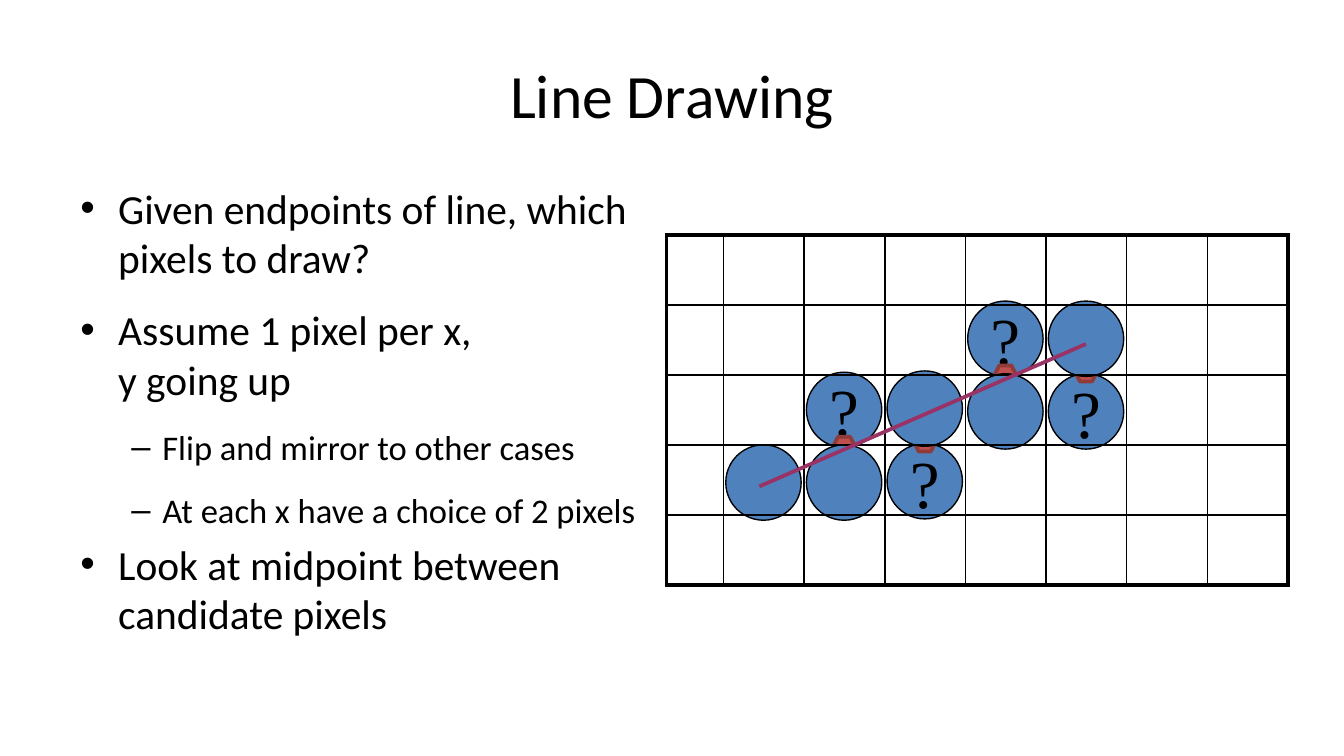
import pptx
import pptx.util
import pptx.dml.color
import pptx.enum.shapes
import pptx.enum.text
import pptx.oxml.ns
from lxml import etree

Pt = pptx.util.Pt
RGBColor = pptx.dml.color.RGBColor
SHAPE = pptx.enum.shapes.MSO_SHAPE
ALIGN = pptx.enum.text.PP_ALIGN
ANCHOR = pptx.enum.text.MSO_ANCHOR
qn = pptx.oxml.ns.qn

BLACK = RGBColor(0x00, 0x00, 0x00)
BLUE = RGBColor(0x4F, 0x81, 0xBD)
RED = RGBColor(0xC0, 0x50, 0x4D)
DARK_RED = RGBColor(0x8E, 0x3B, 0x39)
PURPLE = RGBColor(0x99, 0x33, 0x66)

TITLE = "Line Drawing"
BULLETS = [
    (0, 0, "Given endpoints of line, which pixels to draw?"),
    (0, 11.8, "Assume 1 pixel per x,\vy going up"),
    (1, 11.8, "Flip and mirror to other cases"),
    (1, 11.8, "At each x have a choice of 2 pixels"),
    (0, 4.4, "Look at midpoint between candidate pixels"),
]
LEVELS = [
    {"size": 22.2, "left": 20.2, "hang": 20.2, "mark": "•"},
    {"size": 18.5, "left": 43.9, "hang": 16.6, "mark": "–"},
]

# Each pixel: column, top, top of its midpoint marker (None for a chosen pixel)
PIXELS = [
    (4, 200.2, 195.8),
    (1, 199.4, 234),
    (0, 238.3, None),
    (2, 237.6, 233.3),
    (1, 238.3, None),
    (3, 161.3, 195.8),
    (2, 198.7, None),
    (4, 161.3, None),
    (3, 200.2, None),
]
PIXEL_LEFT, PIXEL_STEP, PIXEL_SIZE = 388.8, 43.2, 40.4
MARKER_WIDTH, MARKER_HEIGHT = 10.8, 8.6

GRID_LEFT, GRID_TOP = 357.1, 126
COLUMN_WIDTHS = [30.5] + [43.2] * 7
ROW_HEIGHTS = [37.5] * 5
THIN, THICK = 1, 2.25
LINE_ENDS = (406.8, 260.6, 581.8, 184.3)


def add_text_box(page, left, top, width, height, anchor):
    box = page.shapes.add_textbox(Pt(left), Pt(top), Pt(width), Pt(height))
    box.text_frame.word_wrap = True
    box.text_frame.vertical_anchor = anchor
    return box.text_frame


def style_text(para, font_name, size):
    para.font.name = font_name
    para.font.size = Pt(size)
    para.font.color.rgb = BLACK


def add_bullet(para, level):
    properties = para._p.get_or_add_pPr()
    properties.set("marL", str(Pt(level["left"])))
    properties.set("indent", str(-Pt(level["hang"])))
    etree.SubElement(properties, qn("a:buFont")).set("typeface", "Arial")
    etree.SubElement(properties, qn("a:buChar")).set("char", level["mark"])


def add_shape(page, kind, left, top, width, height, fill, line, weight):
    shape = page.shapes.add_shape(kind, Pt(left), Pt(top), Pt(width), Pt(height))
    shape.shadow.inherit = False
    shape.fill.solid()
    shape.fill.fore_color.rgb = fill
    shape.line.color.rgb = line
    shape.line.width = Pt(weight)
    return shape


def add_pixel(page, column, top, marker_top):
    left = PIXEL_LEFT + column * PIXEL_STEP
    circle = add_shape(page, SHAPE.OVAL, left, top, PIXEL_SIZE, PIXEL_SIZE,
                       BLUE, BLACK, 0.75)
    if marker_top is None:
        return
    frame = circle.text_frame
    frame.word_wrap = False
    frame.vertical_anchor = ANCHOR.MIDDLE
    para = frame.paragraphs[0]
    para.text = "?"
    para.alignment = ALIGN.CENTER
    style_text(para, "Times New Roman", 36)
    marker_left = left + (PIXEL_SIZE - MARKER_WIDTH) / 2
    add_shape(page, SHAPE.HEXAGON, marker_left, marker_top,
              MARKER_WIDTH, MARKER_HEIGHT, RED, DARK_RED, 2)


def set_borders(cell, outer_sides):
    properties = cell._tc.get_or_add_tcPr()
    for place, side in enumerate(("L", "R", "T", "B")):
        border = etree.Element(qn("a:ln" + side))
        border.set("w", str(Pt(THICK if side in outer_sides else THIN)))
        fill = etree.SubElement(border, qn("a:solidFill"))
        etree.SubElement(fill, qn("a:srgbClr")).set("val", str(BLACK))
        properties.insert(place, border)


def add_grid(page):
    rows, columns = len(ROW_HEIGHTS), len(COLUMN_WIDTHS)
    table = page.shapes.add_table(
        rows, columns, Pt(GRID_LEFT), Pt(GRID_TOP),
        Pt(sum(COLUMN_WIDTHS)), Pt(sum(ROW_HEIGHTS))).table
    table.first_row = False
    table.horz_banding = False
    for column, width in zip(table.columns, COLUMN_WIDTHS):
        column.width = Pt(width)
    for r, height in enumerate(ROW_HEIGHTS):
        table.rows[r].height = Pt(height)
        for c in range(columns):
            cell = table.cell(r, c)
            cell.fill.background()
            edges = {"L": c == 0, "R": c == columns - 1,
                     "T": r == 0, "B": r == rows - 1}
            set_borders(cell, [side for side, outer in edges.items() if outer])


def main():
    deck = pptx.Presentation()
    deck.slide_width, deck.slide_height = Pt(720), Pt(405)
    page = deck.slides.add_slide(deck.slide_layouts[6])

    title = add_text_box(page, 36, 16.6, 648, 67.7, ANCHOR.MIDDLE).paragraphs[0]
    title.text = TITLE
    title.alignment = ALIGN.CENTER
    style_text(title, "Calibri", 33)

    body = add_text_box(page, 36, 94.3, 318.2, 267.1, ANCHOR.TOP)
    for index, (depth, space, text) in enumerate(BULLETS):
        para = body.add_paragraph() if index else body.paragraphs[0]
        para.text = text
        add_bullet(para, LEVELS[depth])
        para.level = depth
        para.space_before = Pt(space)
        style_text(para, "Calibri", LEVELS[depth]["size"])

    for pixel in PIXELS:
        add_pixel(page, *pixel)
    add_grid(page)

    line = page.shapes.add_connector(
        pptx.enum.shapes.MSO_CONNECTOR.STRAIGHT, *map(Pt, LINE_ENDS))
    line.line.color.rgb = PURPLE
    line.line.width = Pt(2)
    etree.SubElement(line._element.spPr, qn("a:effectLst"))

    deck.save("out.pptx")


if __name__ == "__main__":
    main()
